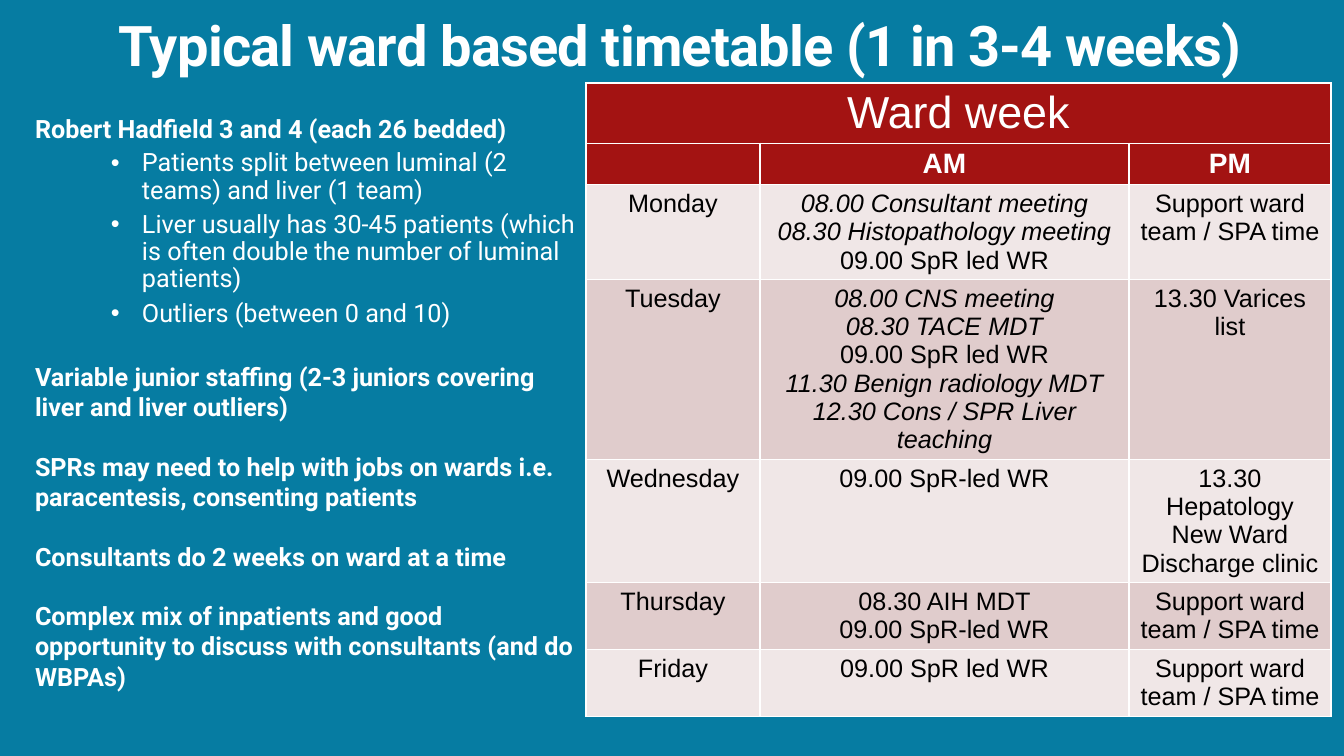
from dataclasses import dataclass

import pptx
import pptx.dml.color
import pptx.enum.text
import pptx.oxml
import pptx.oxml.ns
import pptx.util

EMU_PER_PX = 12192000 / 1344
ALIGN = pptx.enum.text.PP_ALIGN


@dataclass(frozen=True)
class Theme:
    background: str = "067CA2"
    white: str = "FFFFFF"
    black: str = "000000"
    header: str = "A31312"
    bands: tuple[str, str] = ("F0E7E7", "E0CCCC")
    text_font: str = "Roboto"
    table_font: str = "Arial"
    title_size: int = 40
    banner_size: int = 32
    heading_size: int = 20
    text_size: int = 18


@dataclass(frozen=True)
class Point:
    text: str
    gap: int = 0
    bullet: bool = False


@dataclass(frozen=True)
class Entry:
    text: str
    italic: bool = False


@dataclass(frozen=True)
class Day:
    name: str
    height: int
    morning: tuple[Entry, ...]
    afternoon: str


THEME = Theme()
SUPPORT = "Support ward team / SPA time"
COLUMN_WIDTHS = (174, 369, 202)
HEADER_HEIGHTS = (60, 41)
POINTS = (
    Point("Robert Hadfield 3 and 4 (each 26 bedded)"),
    Point("Patients split between luminal (2 teams) and liver (1 team)", 5, True),
    Point("Liver usually has 30-45 patients (which is often double the number "
          "of luminal patients)", 5, True),
    Point("Outliers (between 0 and 10)", 5, True),
    Point("Variable junior staffing (2-3 juniors covering liver and liver outliers)", 24),
    Point("SPRs may need to help with jobs on wards i.e. paracentesis, "
          "consenting patients", 21),
    Point("Consultants do 2 weeks on ward at a time", 21),
    Point("Complex mix of inpatients and good opportunity to discuss with "
          "consultants (and do WBPAs)", 21),
)
DAYS = (
    Day("Monday", 95, (
        Entry("08.00 Consultant meeting", True),
        Entry("08.30 Histopathology meeting", True),
        Entry("09.00 SpR led WR"),
    ), SUPPORT),
    Day("Tuesday", 180, (
        Entry("08.00 CNS meeting", True),
        Entry("08.30 TACE MDT", True),
        Entry("09.00 SpR led WR"),
        Entry("11.30 Benign radiology MDT", True),
        Entry("12.30 Cons / SPR Liver teaching", True),
    ), "13.30 Varices list"),
    Day("Wednesday", 123, (Entry("09.00 SpR-led WR"),),
        "13.30 Hepatology New Ward Discharge clinic"),
    Day("Thursday", 66, (Entry("08.30 AIH MDT"), Entry("09.00 SpR-led WR")), SUPPORT),
    Day("Friday", 67, (Entry("09.00 SpR led WR"),), SUPPORT),
)


def px(length: int) -> pptx.util.Emu:
    return pptx.util.Emu(round(length * EMU_PER_PX))


def rgb(colour: str) -> pptx.dml.color.RGBColor:
    return pptx.dml.color.RGBColor.from_string(colour)


def set_font(para, name: str, size: int, colour: str, bold: bool = False,
             italic: bool = False) -> None:
    font = para.font
    font.name = name
    font.size = pptx.util.Pt(size)
    font.bold = bold
    font.italic = italic
    font.color.rgb = rgb(colour)


def place(box, left: int, top: int, width: int, height: int, anchor):
    box.left, box.top, box.width, box.height = map(px, (left, top, width, height))
    frame = box.text_frame
    frame.margin_left = frame.margin_top = frame.margin_right = frame.margin_bottom = 0
    frame.vertical_anchor = anchor
    frame.word_wrap = True
    frame.auto_size = pptx.enum.text.MSO_AUTO_SIZE.NONE
    return frame


def draw_title(page) -> None:
    frame = place(page.shapes.title, 16, -58, 1328, 136,
                  pptx.enum.text.MSO_ANCHOR.BOTTOM)
    para = frame.paragraphs[0]
    para.text = "Typical ward based timetable (1 in 3-4 weeks)"
    para.alignment = ALIGN.CENTER
    set_font(para, THEME.text_font, THEME.title_size, THEME.white, bold=True)
    para._p.pPr.find(pptx.oxml.ns.qn("a:defRPr")).set("spc", "-50")


def set_bullet(para, bullet: bool) -> None:
    properties = para._p.get_or_add_pPr()
    properties.set("marL", str(px(107 if bullet else 0)))
    properties.set("indent", str(px(-31 if bullet else 0)))
    mark = '<a:buChar {} char="•"/>' if bullet else "<a:buNone {}/>"
    properties.append(pptx.oxml.parse_xml(mark.format(pptx.oxml.ns.nsdecls("a"))))


def draw_points(page, points: tuple[Point, ...]) -> None:
    frame = place(page.placeholders[1], 35, 113, 544, 612,
                  pptx.enum.text.MSO_ANCHOR.TOP)
    for index, point in enumerate(points):
        para = frame.add_paragraph() if index else frame.paragraphs[0]
        para.text = point.text
        para.level = int(point.bullet)
        para.alignment = ALIGN.LEFT
        para.line_spacing = 0.9 if point.bullet else 1.0
        para.space_before = pptx.util.Pt(point.gap)
        set_bullet(para, point.bullet)
        set_font(para, THEME.text_font, THEME.text_size, THEME.white,
                 bold=not point.bullet)


def style_cell(cell, fill: str) -> None:
    cell.fill.solid()
    cell.fill.fore_color.rgb = rgb(fill)
    properties = cell._tc.get_or_add_tcPr()
    for index, side in enumerate("LRTB"):
        properties.insert(index, pptx.oxml.parse_xml(
            f'<a:ln{side} {pptx.oxml.ns.nsdecls("a")} w="12700"><a:solidFill>'
            f'<a:srgbClr val="{THEME.white}"/></a:solidFill></a:ln{side}>'))


def fill_cell(cell, entries: tuple[Entry, ...], fill: str, size: int,
              colour: str, bold: bool = False) -> None:
    style_cell(cell, fill)
    for index, entry in enumerate(entries):
        para = cell.text_frame.add_paragraph() if index else cell.text_frame.paragraphs[0]
        para.text = entry.text
        para.alignment = ALIGN.CENTER
        set_font(para, THEME.table_font, size, colour, bold, entry.italic)


def draw_timetable(page, days: tuple[Day, ...]) -> None:
    heights = HEADER_HEIGHTS + tuple(day.height for day in days)
    table = page.shapes.add_table(
        len(heights), len(COLUMN_WIDTHS), px(586), px(83),
        px(sum(COLUMN_WIDTHS)), px(sum(heights))).table
    for column, width in zip(table.columns, COLUMN_WIDTHS):
        column.width = px(width)
    for row, height in zip(table.rows, heights):
        row.height = px(height)
    table.cell(0, 0).merge(table.cell(0, 2))
    for column, banner in enumerate(("Ward week", "", "")):
        entries = (Entry(banner),) if banner else ()
        fill_cell(table.cell(0, column), entries, THEME.header,
                  THEME.banner_size, THEME.white)
    for column, heading in enumerate(("", "AM", "PM")):
        entries = (Entry(heading),) if heading else ()
        fill_cell(table.cell(1, column), entries, THEME.header,
                  THEME.heading_size, THEME.white, bold=True)
    for index, day in enumerate(days):
        contents = ((Entry(day.name),), day.morning, (Entry(day.afternoon),))
        for column, entries in enumerate(contents):
            fill_cell(table.cell(index + len(HEADER_HEIGHTS), column), entries,
                      THEME.bands[index % 2], THEME.text_size, THEME.black)


def main() -> None:
    deck = pptx.Presentation()
    deck.slide_width, deck.slide_height = px(1344), px(756)
    page = deck.slides.add_slide(deck.slide_layouts[1])
    page.background.fill.solid()
    page.background.fill.fore_color.rgb = rgb(THEME.background)
    draw_title(page)
    draw_points(page, POINTS)
    draw_timetable(page, DAYS)
    deck.save("out.pptx")


if __name__ == "__main__":
    main()
